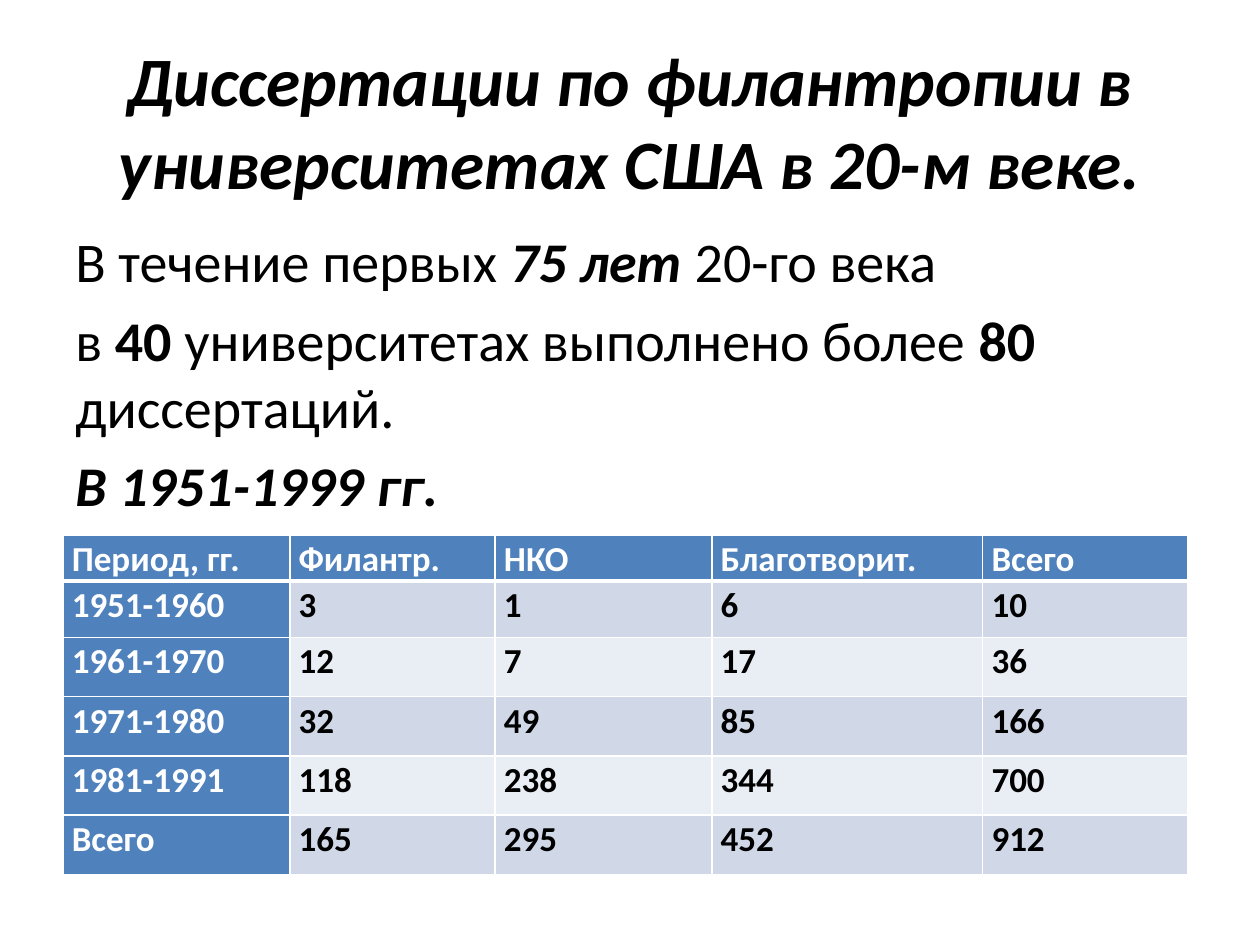
import pptx
import pptx.dml.color
import pptx.enum.text
import pptx.oxml
import pptx.oxml.ns
import pptx.util

Pt = pptx.util.Pt
Inches = pptx.util.Inches


def color(value):
    return pptx.dml.color.RGBColor.from_string(value)


def add_run(p, text, size, fill="000000", bold=False, italic=False):
    r = p.add_run()
    r.text = text
    r.font.name = "Calibri"
    r.font.size = Pt(size)
    r.font.bold = bold
    r.font.italic = italic
    r.font.color.rgb = color(fill)


prs = pptx.Presentation()
prs.slide_width, prs.slide_height = Inches(10), Inches(7.5)
W, H = prs.slide_width, prs.slide_height
left, width = int(W * 0.05), int(W * 0.9)
s = prs.slides.add_slide(prs.slide_layouts[5])

sp = s.shapes.title
sp.left, sp.top, sp.width, sp.height = left, int(H * 0.04), width, int(H * 0.25)
tf = sp.text_frame
tf.word_wrap = True
tf.auto_size = pptx.enum.text.MSO_AUTO_SIZE.NONE
tf.vertical_anchor = pptx.enum.text.MSO_ANCHOR.MIDDLE
tf.margin_top, tf.margin_bottom = 0, Inches(0.56)
p = tf.paragraphs[0]
p.alignment = pptx.enum.text.PP_ALIGN.CENTER
add_run(p, "Диссертации по филантропии в университетах США в 20-м веке.", 39.6, bold=True, italic=True)

body = [
    [("В течение первых ", False, False), ("75 лет", True, True), (" 20-го века", False, False)],
    [("в ", False, False), ("40 ", True, False), ("университетах выполнено более ", False, False),
     ("80", True, False), (" диссертаций.", False, False)],
    [("В 1951-1999 гг.", True, True)],
]
sp = s.shapes.add_textbox(left, Inches(1.75), width, int(H * 0.66))
tf = sp.text_frame
tf.word_wrap = True
for i, runs in enumerate(body):
    p = tf.add_paragraph() if i else tf.paragraphs[0]
    p.space_before = Pt(6.4)
    for text, bold, italic in runs:
        add_run(p, text, 32, bold=bold, italic=italic)

rows = [
    ["Период, гг.", "Филантр.", "НКО", "Благотворит.", "Всего"],
    ["1951-1960", "3", "1", "6", "10"],
    ["1961-1970", "12", "7", "17", "36"],
    ["1971-1980", "32", "49", "85", "166"],
    ["1981-1991", "118", "238", "344", "700"],
    ["Всего", "165", "295", "452", "912"],
]
col_widths = [1.8, 1.63, 1.72, 2.15, 1.63]
row_heights = [0.36, 0.45] + [0.47] * 4
table = s.shapes.add_table(
    len(rows), len(col_widths), left, Inches(4.25),
    Inches(sum(col_widths)), Inches(sum(row_heights))).table
table.first_col = True
for column, w in zip(table.columns, col_widths):
    column.width = Inches(w)
for row, h in zip(table.rows, row_heights):
    row.height = Inches(h)

for i, row in enumerate(rows):
    for j, text in enumerate(row):
        cell = table.cell(i, j)
        heading = i == 0 or j == 0
        cell.margin_left = cell.margin_right = Inches(0.07)
        cell.margin_top = cell.margin_bottom = 0
        p = cell.text_frame.paragraphs[0]
        p.line_spacing = 1.07
        add_run(p, text, 20, "FFFFFF" if heading else "000000", bold=True)
        tcPr = cell._tc.get_or_add_tcPr()
        for side in "LRTB":
            thick = (i, side) in [(0, "B"), (1, "T")]
            tcPr.append(pptx.oxml.parse_xml(
                f'<a:ln{side} {pptx.oxml.ns.nsdecls("a")} w="{Pt(3 if thick else 1)}">'
                f'<a:solidFill><a:srgbClr val="FFFFFF"/></a:solidFill></a:ln{side}>'))
        cell.fill.solid()
        cell.fill.fore_color.rgb = color("4F81BD" if heading else ("E9EDF4", "D0D8E8")[i % 2])

prs.save("out.pptx")
